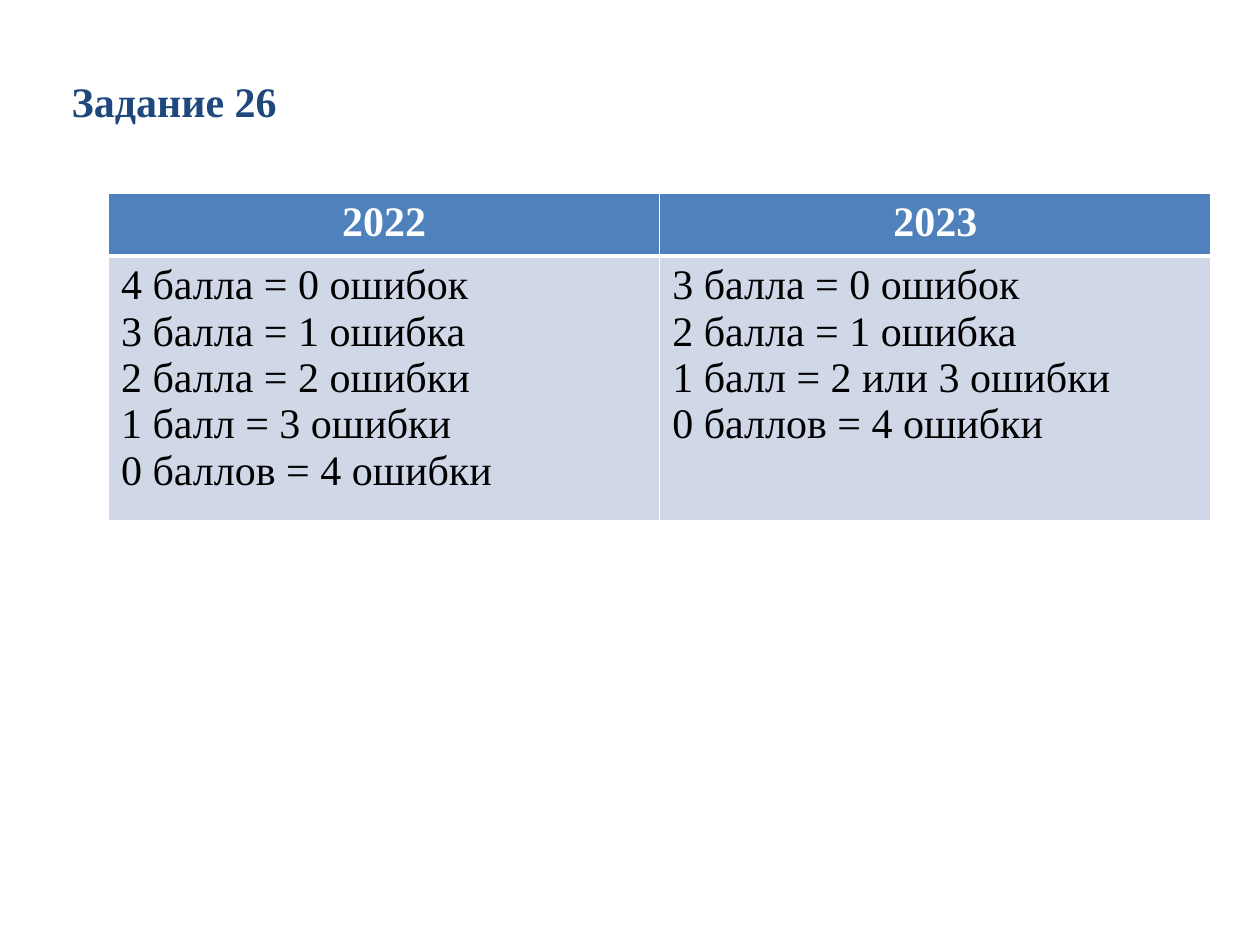
from dataclasses import dataclass

from lxml.etree import SubElement
from pptx import Presentation
from pptx.dml.color import RGBColor as Rgb
from pptx.enum.text import MSO_ANCHOR as Anchor, MSO_AUTO_SIZE as AutoSize, PP_ALIGN as Align
from pptx.oxml.ns import qn
from pptx.table import _Cell as Cell
from pptx.text.text import TextFrame
from pptx.util import Pt


@dataclass(frozen=True)
class Theme:
    font: str = "Times New Roman"
    size: float = 24
    title: str = "1F497D"
    header_text: str = "FFFFFF"
    body_text: str = "000000"
    header_fill: str = "4F81BD"
    body_fill: str = "D0D8E8"
    border: str = "FFFFFF"
    thin: float = 1
    thick: float = 3


@dataclass(frozen=True)
class YearScale:
    year: str
    scores: tuple[str, ...]


THEME = Theme()
SCALES = (
    YearScale("2022", (
        "4 балла = 0 ошибок",
        "3 балла = 1 ошибка",
        "2 балла = 2 ошибки",
        "1 балл = 3 ошибки",
        "0 баллов = 4 ошибки",
    )),
    YearScale("2023", (
        "3 балла = 0 ошибок",
        "2 балла = 1 ошибка",
        "1 балл = 2 или 3 ошибки",
        "0 баллов = 4 ошибки",
    )),
)
COLUMN_WIDTH = Pt(315)
ROW_HEIGHT = Pt(29.2)


def write_lines(frame: TextFrame, lines: tuple[str, ...], color: str,
                bold: bool, align: Align = Align.LEFT) -> None:
    for index, line in enumerate(lines):
        paragraph = frame.add_paragraph() if index else frame.paragraphs[0]
        paragraph.alignment = align
        run = paragraph.add_run()
        run.text = line
        run.font.name = THEME.font
        run.font.size = Pt(THEME.size)
        run.font.bold = bold
        run.font.color.rgb = Rgb.from_string(color)


def style_cell(cell: Cell, fill: str, top: float, bottom: float) -> None:
    """Set the borders, then the fill, in the order the schema asks for."""
    properties = cell._tc.get_or_add_tcPr()
    widths = {"a:lnL": THEME.thin, "a:lnR": THEME.thin, "a:lnT": top, "a:lnB": bottom}
    for side, width in widths.items():
        line = SubElement(properties, qn(side), w=str(Pt(width)))
        SubElement(SubElement(line, qn("a:solidFill")), qn("a:srgbClr"), val=THEME.border)
    cell.fill.solid()
    cell.fill.fore_color.rgb = Rgb.from_string(fill)


def main() -> None:
    deck = Presentation()
    deck.slide_width, deck.slide_height = Pt(720), Pt(540)
    slide = deck.slides.add_slide(deck.slide_layouts[5])

    heading = slide.shapes.title
    heading.left, heading.top, heading.width, heading.height = Pt(33.8), Pt(39.6), Pt(500.4), Pt(36)
    heading.text_frame.vertical_anchor = Anchor.TOP
    heading.text_frame.auto_size = AutoSize.SHAPE_TO_FIT_TEXT
    write_lines(heading.text_frame, ("Задание 26",), THEME.title, bold=True)

    scoring = slide.shapes.add_table(
        2, len(SCALES), Pt(62), Pt(110.2), COLUMN_WIDTH * len(SCALES), ROW_HEIGHT * 2).table
    for column, scale in enumerate(SCALES):
        year, scores = scoring.cell(0, column), scoring.cell(1, column)
        style_cell(year, THEME.header_fill, THEME.thin, THEME.thick)
        write_lines(year.text_frame, (scale.year,), THEME.header_text, True, Align.CENTER)
        style_cell(scores, THEME.body_fill, THEME.thick, THEME.thin)
        write_lines(scores.text_frame, scale.scores, THEME.body_text, False)

    deck.save("out.pptx")


if __name__ == "__main__":
    main()
